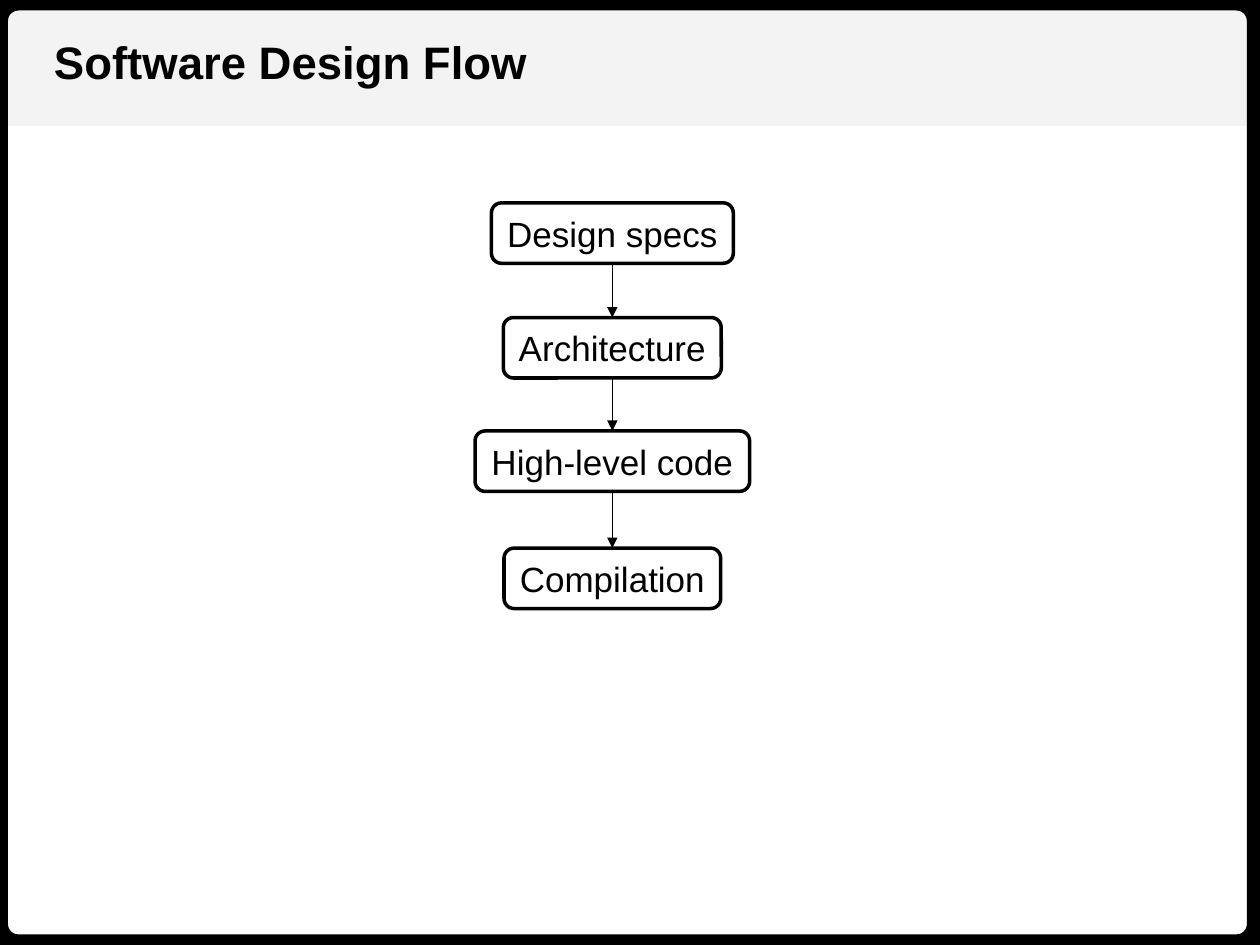
"""Build the software design flow slide."""
from lxml import etree
from pptx import Presentation
from pptx.dml.color import RGBColor
from pptx.enum.shapes import MSO_CONNECTOR, MSO_SHAPE
from pptx.enum.text import MSO_ANCHOR, MSO_AUTO_SIZE, PP_ALIGN
from pptx.oxml.ns import qn
from pptx.util import Inches, Pt

RECT, ROUND = MSO_SHAPE.RECTANGLE, MSO_SHAPE.ROUNDED_RECTANGLE
LINE = MSO_CONNECTOR.STRAIGHT
LEFT, CENTER = PP_ALIGN.LEFT, PP_ALIGN.CENTER
TOP, MIDDLE = MSO_ANCHOR.TOP, MSO_ANCHOR.MIDDLE
FIT = MSO_AUTO_SIZE.SHAPE_TO_FIT_TEXT
COLORS = {"ink": "000000", "paper": "FFFFFF", "band": "F3F3F3"}


def add_form(kind, x, y, w, h, fill=None, line=None):
    form = slide.shapes.add_shape(kind, Inches(x), Inches(y), Inches(w), Inches(h))
    form.shadow.inherit = False
    if fill:
        form.fill.solid()
        form.fill.fore_color.rgb = RGBColor.from_string(COLORS[fill])
    else:
        form.fill.background()
    if line:
        form.line.color.rgb = RGBColor.from_string(COLORS["ink"])
        form.line.width = Pt(line)
    else:
        form.line.fill.background()
    return form


def put_text(shape, text, size=20, bold=False, align=CENTER, anchor=MIDDLE):
    frame = shape.text_frame
    frame.word_wrap = False
    frame.auto_size = FIT
    frame.vertical_anchor = anchor
    para = frame.paragraphs[0]
    para.alignment = align
    run = para.add_run()
    run.text = text
    run.font.name = "Arial"
    run.font.size = Pt(size)
    run.font.bold = bold
    run.font.color.rgb = RGBColor.from_string(COLORS["ink"])


deck = Presentation()
deck.slide_width, deck.slide_height = Inches(10), Inches(7.5)
slide = deck.slides.add_slide(deck.slide_layouts[6])

add_form(RECT, 0, 0, 10, 1, fill="band")
border = add_form(ROUND, -0.02, 0, 10, 7.5, line=12)
border.adjustments[0] = 0.022

title = slide.shapes.add_textbox(Inches(0.33), Inches(0.22), Inches(3.99), Inches(0.54))
put_text(title, "Software Design Flow", size=26, bold=True, align=LEFT, anchor=TOP)

mid = 4.86
steps = [
    ("Design specs", 1.61, 1.92),
    ("Architecture", 2.52, 1.73),
    ("High-level code", 3.42, 2.18),
    ("Compilation", 4.35, 1.72),
]
boxes = []
for name, top, width in steps:
    box = add_form(ROUND, mid - width / 2, top, width, 0.48, fill="paper", line=2)
    put_text(box, name)
    boxes.append(box)

for upper, lower in zip(boxes, boxes[1:]):
    arrow = slide.shapes.add_connector(LINE, 0, 0, 0, 0)
    arrow.begin_connect(upper, 2)
    arrow.end_connect(lower, 0)
    arrow.line.color.rgb = RGBColor.from_string(COLORS["ink"])
    arrow.line.width = Pt(0.75)
    etree.SubElement(arrow.line._get_or_add_ln(), qn("a:tailEnd"), type="triangle")
    etree.SubElement(arrow._element.spPr, qn("a:effectLst"))

deck.save("out.pptx")
